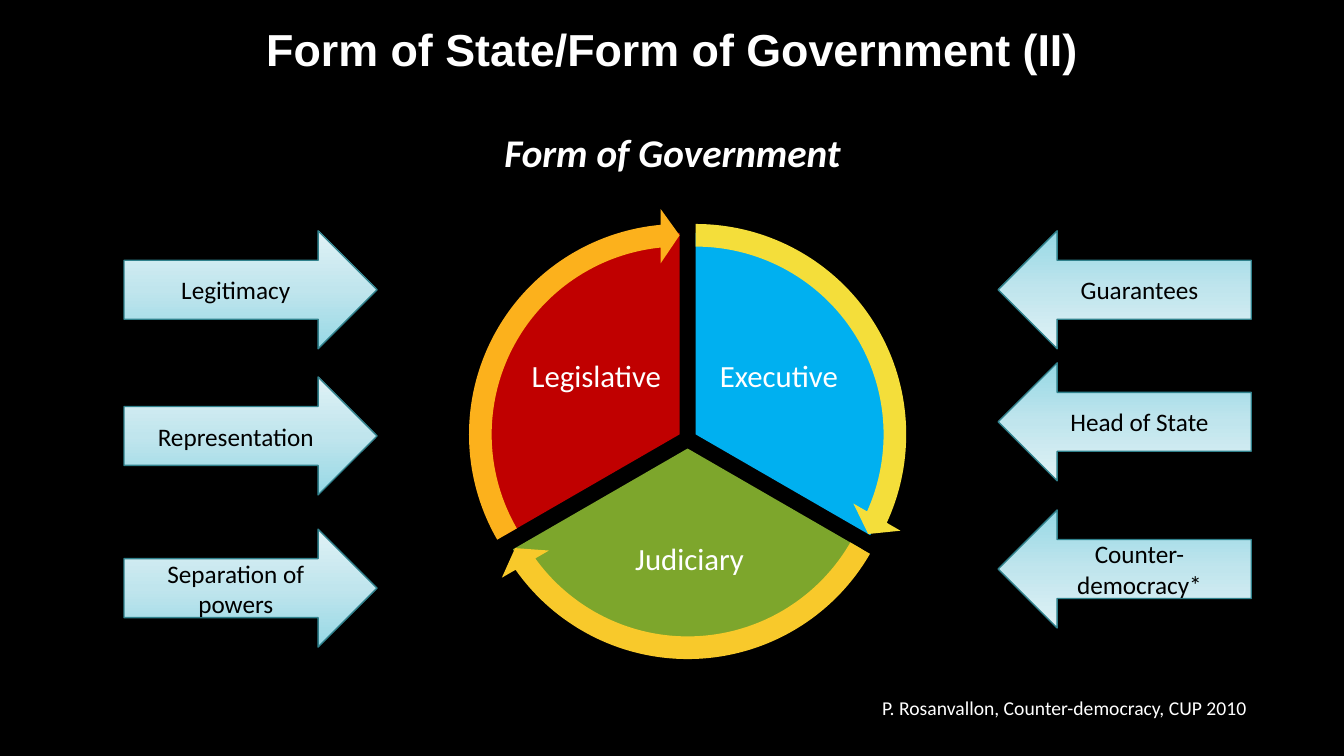
from copy import deepcopy

from pptx import Presentation
from pptx.dml.color import RGBColor
from pptx.enum.shapes import MSO_SHAPE
from pptx.enum.text import MSO_ANCHOR, MSO_AUTO_SIZE, PP_ALIGN
from pptx.oxml.ns import qn
from pptx.util import Inches, Pt

BLACK = RGBColor(0x00, 0x00, 0x00)
WHITE = RGBColor(0xFF, 0xFF, 0xFF)
BLUE = RGBColor(0x00, 0xB0, 0xF0)
GREEN = RGBColor(0x7D, 0xA6, 0x2C)
RED = RGBColor(0xC0, 0x00, 0x00)
YELLOW = RGBColor(0xF4, 0xDE, 0x3A)
GOLD = RGBColor(0xF8, 0xC9, 0x2B)
ORANGE = RGBColor(0xFC, 0xB1, 0x1C)
TEAL = RGBColor(0x30, 0x81, 0x8C)
ARROW_SHADES = (
    (0, RGBColor(0x96, 0xD8, 0xE5)),
    (0.5, RGBColor(0xC0, 0xE5, 0xED)),
    (1, RGBColor(0xE0, 0xF2, 0xF6)),
)

PIE_SIZE = 4
RING_SIZE = 4.49
RING_OFFSET = (PIE_SIZE - RING_SIZE) / 2

# pie left, top, start, end, colour; ring head, tail, colour; label and its box
POWERS = (
    ((4.9, 2.31, 162, 18, BLUE), (14.72, 161.99, YELLOW),
     "Executive", (7.01, 3.15, 1.43, 1.19)),
    ((4.82, 2.45, 18, 90, GREEN), (86.72, 18, GOLD),
     "Judiciary", (5.77, 5.04, 2.14, 1.05)),
    ((4.74, 2.31, 90, 162, RED), (158.73, 90, ORANGE),
     "Legislative", (5.2, 3.15, 1.43, 1.19)),
)
INPUTS = (("Legitimacy", 2.29), ("Representation", 3.74), ("Separation of powers", 5.25))
CHECKS = (("Guarantees", 2.29), ("Head of State", 3.6), ("Counter-democracy*", 5.06))


class SlideBuilder:
    """Draws elements in one style on the current slide."""

    font_name = "Calibri"

    def __init__(self, slide):
        self.slide = slide
        slide.background.fill.solid()
        slide.background.fill.fore_color.rgb = BLACK

    def style(self, paragraph, size, color, name=font_name, align=PP_ALIGN.CENTER):
        paragraph.alignment = align
        for run in paragraph.runs:
            run.font.name = name
            run.font.size = Pt(size)
            run.font.color.rgb = color

    def title(self, heading, subheading, box):
        title = self.slide.shapes.title
        title.left, title.top, title.width, title.height = map(Inches, box)
        frame = title.text_frame
        frame.text = f"{heading}\n{subheading}"
        frame.auto_size = MSO_AUTO_SIZE.NONE
        frame.vertical_anchor = MSO_ANCHOR.MIDDLE
        frame.margin_bottom = Inches(0.35)
        first, second = frame.paragraphs
        self.style(first, 32, WHITE, "Arial")
        self.style(second, 28, WHITE)
        second.space_before = Pt(38)
        for paragraph in (first, second):
            paragraph.runs[0].font.bold = True
        second.runs[0].font.italic = True

    def preset(self, shapes, kind, box, adjustments=()):
        shape = shapes.add_shape(kind, *map(Inches, box))
        shape.shadow.inherit = False
        for index, value in enumerate(adjustments):
            shape.adjustments[index] = value
        return shape

    def segment(self, shapes, kind, box, adjustments, color):
        shape = self.preset(shapes, kind, box, adjustments)
        shape.fill.solid()
        shape.fill.fore_color.rgb = color
        shape.line.fill.background()

    def label(self, shapes, text, box):
        frame = shapes.add_textbox(*map(Inches, box)).text_frame
        frame.text = text
        frame.word_wrap = True
        frame.vertical_anchor = MSO_ANCHOR.MIDDLE
        frame.margin_left = frame.margin_right = Inches(0.03)
        frame.margin_top = frame.margin_bottom = Inches(0.03)
        frame.paragraphs[0].line_spacing = 0.9
        self.style(frame.paragraphs[0], 22, WHITE)

    def cycle(self, powers):
        shapes = self.slide.shapes.add_group_shape().shapes
        for (left, top, start, end, color), _, text, label_box in powers:
            self.segment(shapes, MSO_SHAPE.PIE, (left, top, PIE_SIZE, PIE_SIZE),
                         (start, end), color)
            self.label(shapes, text, label_box)
        for (left, top, *_), (head, tail, color), _, _ in powers:
            box = (left + RING_OFFSET, top + RING_OFFSET, RING_SIZE, RING_SIZE)
            self.segment(shapes, MSO_SHAPE.CIRCULAR_ARROW, box,
                         (0.05, 3.28, head, tail, 0.06), color)

    def block_arrow(self, kind, text, left, top, angle):
        arrow = self.preset(self.slide.shapes, kind, (left, top, 2.51, 1.17))
        arrow.fill.gradient()
        stop_list = arrow._element.spPr.find(qn("a:gradFill")).find(qn("a:gsLst"))
        stop_list.append(deepcopy(stop_list[0]))
        for stop, (position, color) in zip(arrow.fill.gradient_stops, ARROW_SHADES):
            stop.position = position
            stop.color.rgb = color
        arrow.fill.gradient_angle = angle
        arrow.line.color.rgb = TEAL
        arrow.line.width = Pt(1)
        frame = arrow.text_frame
        frame.text = text
        frame.word_wrap = True
        frame.vertical_anchor = MSO_ANCHOR.MIDDLE
        self.style(frame.paragraphs[0], 18, BLACK)

    def citation(self, text, box):
        frame = self.slide.shapes.add_textbox(*map(Inches, box)).text_frame
        frame.text = text
        frame.word_wrap = False
        self.style(frame.paragraphs[0], 14, WHITE, align=PP_ALIGN.LEFT)


def main():
    deck = Presentation()
    deck.slide_width, deck.slide_height = Inches(13.33), Inches(7.5)
    builder = SlideBuilder(deck.slides.add_slide(deck.slide_layouts[5]))
    builder.title("Form of State/Form of Government (II)", "Form of Government",
                  (0.92, 0.4, 11.5, 1.45))
    builder.cycle(POWERS)
    for text, top in INPUTS:
        builder.block_arrow(MSO_SHAPE.RIGHT_ARROW, text, 1.23, top, 90)
    for text, top in CHECKS:
        builder.block_arrow(MSO_SHAPE.LEFT_ARROW, text, 9.9, top, 270)
    builder.citation("P. Rosanvallon, Counter-democracy, CUP 2010", (8.65, 6.85, 3.89, 0.34))
    deck.save("out.pptx")


if __name__ == "__main__":
    main()
